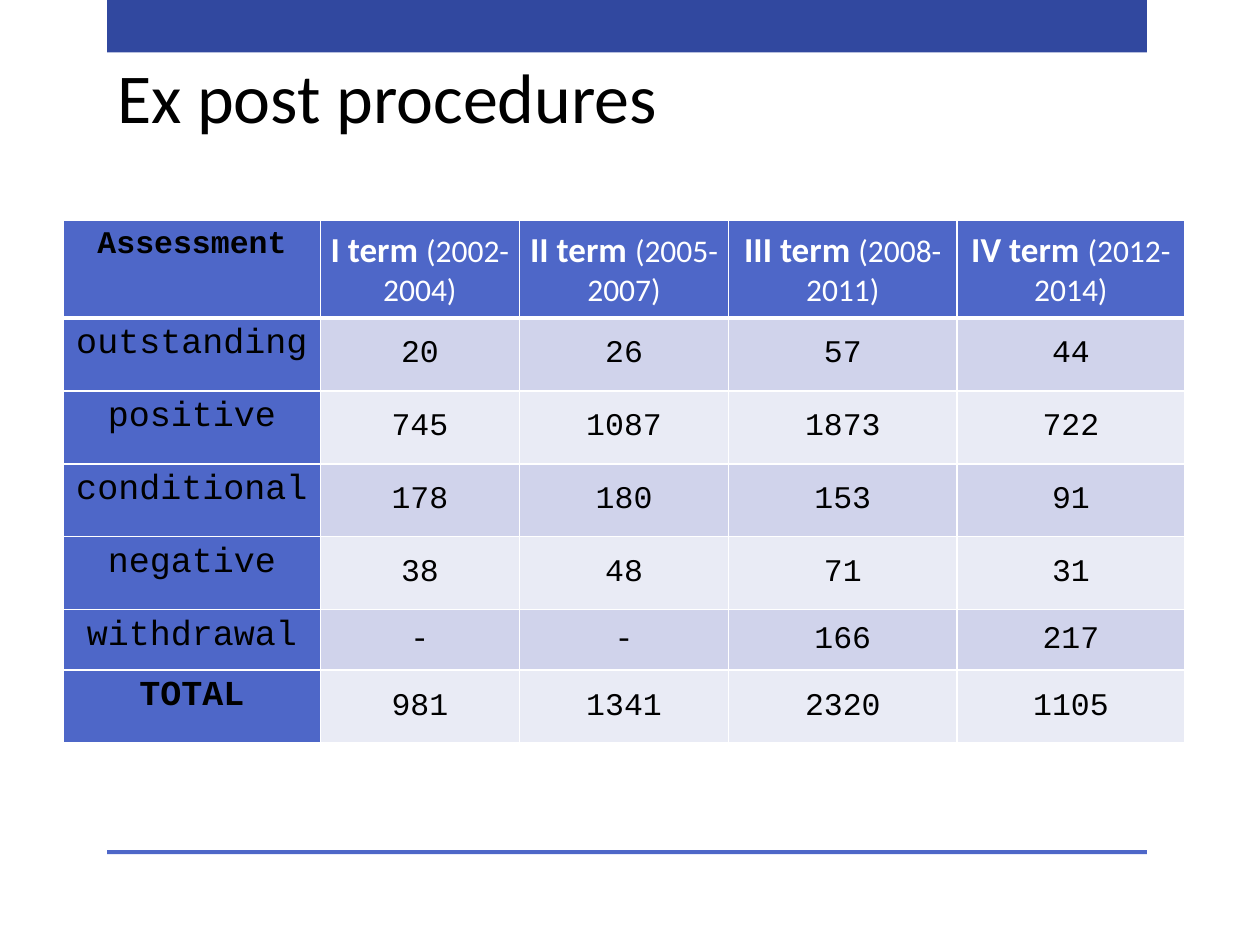
"""Build the slide with the table of ex post procedure assessments."""
from lxml import etree
from pptx import Presentation
from pptx.dml.color import RGBColor
from pptx.enum.shapes import MSO_SHAPE
from pptx.enum.text import MSO_ANCHOR, PP_ALIGN
from pptx.oxml.ns import qn
from pptx.util import Cm, Pt

RECTANGLE = MSO_SHAPE.RECTANGLE
TOP, MIDDLE, BOTTOM = MSO_ANCHOR.TOP, MSO_ANCHOR.MIDDLE, MSO_ANCHOR.BOTTOM
CENTER = PP_ALIGN.CENTER

BLACK = RGBColor(0x00, 0x00, 0x00)
WHITE = RGBColor(0xFF, 0xFF, 0xFF)
NAVY = RGBColor(0x31, 0x48, 0x9F)
BLUE = RGBColor(0x4E, 0x67, 0xC8)
LAVENDER = RGBColor(0xD0, 0xD3, 0xEB)
PALE = RGBColor(0xE9, 0xEB, 0xF5)

TERMS = [
    ("I term ", "(2002-2004)"),
    ("II term ", "(2005-2007)"),
    ("III term ", "(2008-2011)"),
    ("IV term ", "(2012-2014)"),
]
ASSESSMENTS = [
    ("outstanding", "20", "26", "57", "44"),
    ("positive", "745", "1087", "1873", "722"),
    ("conditional", "178", "180", "153", "91"),
    ("negative", "38", "48", "71", "31"),
    ("withdrawal", "-", "-", "166", "217"),
    ("TOTAL", "981", "1341", "2320", "1105"),
]
COLUMN_WIDTHS = [5.18, 4.01, 4.22, 4.6, 4.6]
ROW_HEIGHTS = [1.96, 1.47, 1.47, 1.47, 1.47, 1.22, 1.47]


def add_span(para, text, size, font, color, bold=False):
    span = para.add_run()
    span.text = text
    span.font.size = Pt(size)
    span.font.name = font
    span.font.color.rgb = color
    span.font.bold = bold


def style_cell(cell, color, anchor, top_width, bottom_width):
    properties = cell._tc.get_or_add_tcPr()
    widths = {"a:lnL": 1, "a:lnR": 1, "a:lnT": top_width, "a:lnB": bottom_width}
    for tag, width in widths.items():
        line = etree.SubElement(properties, qn(tag), w=str(Pt(width)))
        fill = etree.SubElement(line, qn("a:solidFill"))
        etree.SubElement(fill, qn("a:srgbClr"), val=str(WHITE))
    cell.fill.solid()
    cell.fill.fore_color.rgb = color
    cell.vertical_anchor = anchor
    cell.text_frame.paragraphs[0].alignment = CENTER


deck = Presentation()
deck.slide_width, deck.slide_height = Cm(25.4), Cm(19.05)
page = deck.slides.add_slide(deck.slide_layouts[6])

for top, height, color in [(0, 1.06, NAVY), (17.14, 0.08, BLUE)]:
    band = page.shapes.add_shape(RECTANGLE, Cm(2.16), Cm(top), Cm(20.96), Cm(height))
    band.shadow.inherit = False
    band.fill.solid()
    band.fill.fore_color.rgb = color
    band.line.fill.background()

title_box = page.shapes.add_textbox(Cm(2.11), Cm(0.53), Cm(20.75), Cm(2.36))
title_box.text_frame.word_wrap = True
title_box.text_frame.vertical_anchor = BOTTOM
add_span(title_box.text_frame.paragraphs[0], "Ex post procedures", 40, "Calibri", BLACK)

table = page.shapes.add_table(
    len(ROW_HEIGHTS), len(COLUMN_WIDTHS), Cm(1.28), Cm(4.45),
    Cm(sum(COLUMN_WIDTHS)), Cm(sum(ROW_HEIGHTS)),
).table
for column, width in zip(table.columns, COLUMN_WIDTHS):
    column.width = Cm(width)
for row, height in zip(table.rows, ROW_HEIGHTS):
    row.height = Cm(height)

corner = table.cell(0, 0)
style_cell(corner, BLUE, TOP, 1, 3)
add_span(corner.text_frame.paragraphs[0], "Assessment", 18, "Courier New", BLACK, True)

for column_index, (term, years) in enumerate(TERMS, start=1):
    cell = table.cell(0, column_index)
    style_cell(cell, BLUE, MIDDLE, 1, 3)
    cell.margin_left = cell.margin_right = Cm(0.15)
    cell.margin_top = cell.margin_bottom = 0
    para = cell.text_frame.paragraphs[0]
    add_span(para, term, 20, "Calibri", WHITE, True)
    add_span(para, years, 18, "Calibri", WHITE)

for row_index, values in enumerate(ASSESSMENTS, start=1):
    stripe = LAVENDER if row_index % 2 else PALE
    top_width = 3 if row_index == 1 else 1
    for column_index, value in enumerate(values):
        cell = table.cell(row_index, column_index)
        is_label = column_index == 0
        style_cell(cell, BLUE if is_label else stripe, TOP if is_label else MIDDLE, top_width, 1)
        add_span(cell.text_frame.paragraphs[0], value, 20 if is_label else 18,
                 "Courier New", BLACK, value == "TOTAL")

deck.save("out.pptx")
